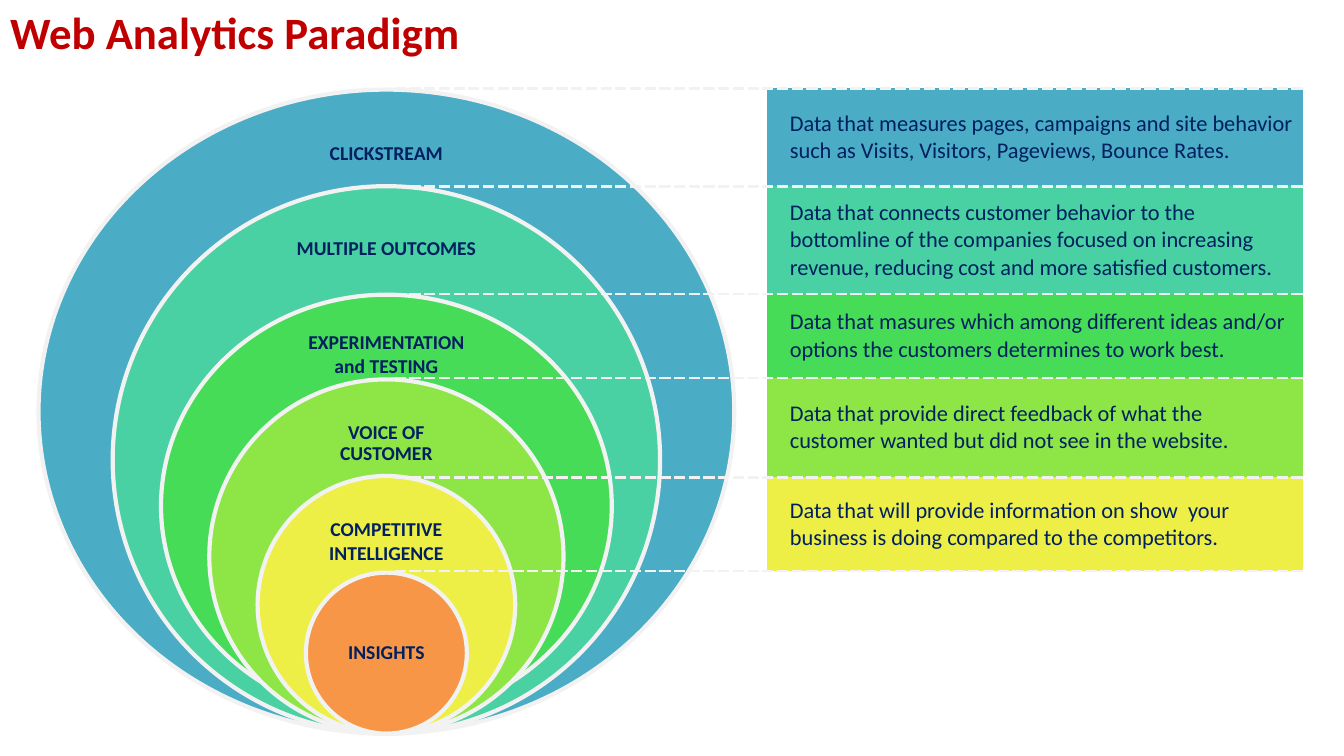
from dataclasses import dataclass

from lxml.etree import SubElement
from pptx import Presentation
from pptx.dml.color import RGBColor
from pptx.enum.shapes import MSO_SHAPE
from pptx.enum.text import MSO_ANCHOR, PP_ALIGN
from pptx.oxml import parse_xml
from pptx.oxml.ns import qn
from pptx.util import Pt


@dataclass(frozen=True)
class Theme:
    font: str = "Calibri"
    title: str = "C00000"
    ink: str = "002060"
    rule: str = "F2F2F2"
    title_size: int = 32
    body_size: int = 16
    label_size: int = 14
    levels: tuple = ("4BACC6", "49D1A3", "47DC57", "8DE646", "EEEF46", "F79646")


@dataclass(frozen=True)
class Box:
    left: float
    top: float
    width: float
    height: float

    def lengths(self):
        return Pt(self.left), Pt(self.top), Pt(self.width), Pt(self.height)


THEME = Theme()
NO_STYLE = "{2D5ABB26-0587-4C30-8999-92F81FD0307C}"
LABEL_HEIGHT = 46

# Ring: label, width, height, lift above the base, label width, label gap, line spacing
RINGS = [
    ("CLICKSTREAM", 497, 460, 0, 186, 23, 0.9),
    ("MULTIPLE OUTCOMES", 391, 391, 0, 168, 22, 0.9),
    ("EXPERIMENTATION\nand TESTING", 322, 302, 11.5, 166, 19, 1),
    ("VOICE OF CUSTOMER", 253, 253, 0, 137, 23, 0.9),
    ("COMPETITIVE\nINTELLIGENCE", 184, 184, 0, 120, 23, 1),
    ("INSIGHTS", 115, 115, 0, 81, 34.5, 0.9),
]

# Row: description, height
DESCRIPTIONS = [
    ("Data that measures pages, campaigns and site behavior such as Visits, "
     "Visitors, Pageviews, Bounce Rates.", 70),
    ("Data that connects customer behavior to the bottomline of the companies "
     "focused on increasing revenue, reducing cost and more satisfied customers.", 77),
    ("Data that masures which among different ideas and/or options the customers "
     "determines to work best.", 60),
    ("Data that provide direct feedback of what the customer wanted but did not "
     "see in the website.", 71),
    ("Data that will provide information on show  your business is doing compared "
     "to the competitors.", 67),
]


def color(code):
    return RGBColor.from_string(code)


def write(frame, text, size, ink, bold=False, align=PP_ALIGN.LEFT, spacing=1):
    frame.text = text
    for paragraph in frame.paragraphs:
        paragraph.alignment = align
        paragraph.line_spacing = spacing
        for run in paragraph.runs:
            run.font.name = THEME.font
            run.font.size = Pt(size)
            run.font.bold = bold
            run.font.color.rgb = color(ink)


def add_heading(slide, box):
    heading = slide.shapes.title
    heading.left, heading.top, heading.width, heading.height = box.lengths()
    write(heading.text_frame, "Web Analytics Paradigm", THEME.title_size,
          THEME.title, bold=True)
    heading.text_frame.vertical_anchor = MSO_ANCHOR.TOP


def add_rings(slide, box):
    """Nested circles that share a centre line and rest on the box's base."""
    rings = slide.shapes.add_group_shape().shapes
    center = box.left + box.width / 2
    base = box.top + box.height
    for ring_data, fill in zip(RINGS, THEME.levels):
        name, width, height, lift, label_width, gap, spacing = ring_data
        top = base - lift - height
        ring_box = Box(center - width / 2, top, width, height)
        ring = rings.add_shape(MSO_SHAPE.OVAL, *ring_box.lengths())
        ring.shadow.inherit = False
        ring.fill.solid()
        ring.fill.fore_color.rgb = color(fill)
        ring.line.color.rgb = color(THEME.rule)
        ring.line.width = Pt(3)

        label_box = Box(center - label_width / 2, top + gap, label_width, LABEL_HEIGHT)
        label = rings.add_textbox(*label_box.lengths()).text_frame
        label.word_wrap = True
        label.vertical_anchor = MSO_ANCHOR.MIDDLE
        label.margin_left = label.margin_right = Pt(8)
        label.margin_top = label.margin_bottom = Pt(4)
        write(label, name, THEME.label_size, THEME.ink, True, PP_ALIGN.CENTER, spacing)


def add_dashed_borders(cell):
    properties = cell._tc.get_or_add_tcPr()
    for position, side in enumerate(("a:lnT", "a:lnB")):
        border = SubElement(properties, qn(side), w=str(Pt(2.25)))
        fill = SubElement(border, qn("a:solidFill"))
        SubElement(fill, qn("a:srgbClr"), val=THEME.rule)
        SubElement(border, qn("a:prstDash"), val="dash")
        properties.insert(position, border)


def add_descriptions(slide, box, lead_width):
    """Table whose empty lead column carries the dashed lines to the rings."""
    table = slide.shapes.add_table(len(DESCRIPTIONS), 2, *box.lengths()).table
    table.first_row = table.horz_banding = False
    table._tbl.tblPr.find(qn("a:tableStyleId")).text = NO_STYLE
    table.columns[0].width = Pt(lead_width)
    table.columns[1].width = Pt(box.width - lead_width)
    for row, (description, height), fill in zip(table.rows, DESCRIPTIONS, THEME.levels):
        row.height = Pt(height)
        lead, body = row.cells
        lead.fill.background()
        body.fill.solid()
        body.fill.fore_color.rgb = color(fill)
        body.vertical_anchor = MSO_ANCHOR.MIDDLE
        write(body.text_frame, description, THEME.body_size, THEME.ink)
        body.text_frame.paragraphs[0]._p.get_or_add_pPr().set("marL", str(Pt(9)))
        for cell in (lead, body):
            add_dashed_borders(cell)


def main():
    deck = Presentation()
    deck.slide_width, deck.slide_height = Pt(960), Pt(540)
    slide = deck.slides.add_slide(deck.slide_layouts[5])
    add_heading(slide, Box(0, 0, 864, 90))
    add_rings(slide, Box(27.5, 64, 497, 460))
    table_height = sum(height for _, height in DESCRIPTIONS)
    add_descriptions(slide, Box(282, 63, 649, table_height), lead_width=266)
    deck.save("out.pptx")


if __name__ == "__main__":
    main()
